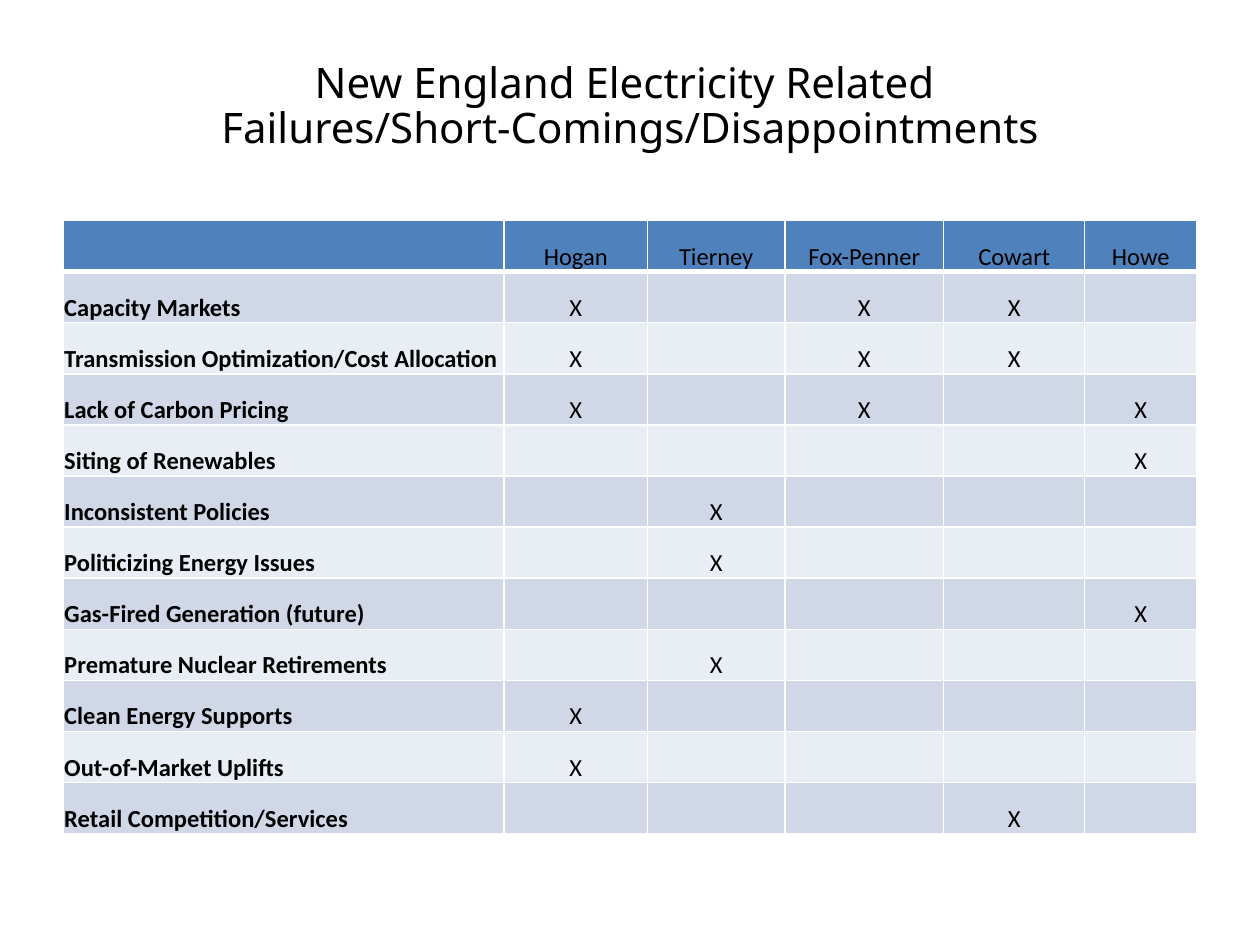
from dataclasses import dataclass

from lxml import etree
from pptx import Presentation
from pptx.dml.color import RGBColor
from pptx.enum.text import MSO_ANCHOR, PP_ALIGN
from pptx.oxml.ns import qn
from pptx.slide import Slide
from pptx.table import _Cell
from pptx.text.text import _Paragraph
from pptx.util import Inches, Pt

CENTER = PP_ALIGN.CENTER
LEFT = PP_ALIGN.LEFT
MIDDLE = MSO_ANCHOR.MIDDLE
BOTTOM = MSO_ANCHOR.BOTTOM

COLORS = {
    "text": "000000",
    "header": "4F81BD",
    "dark_band": "D0D8E8",
    "light_band": "E9EDF4",
    "border": "FFFFFF",
}

TITLE = "New England Electricity Related \vFailures/Short-Comings/Disappointments"
SPEAKERS = ["Hogan", "Tierney", "Fox-Penner", "Cowart", "Howe"]
COLUMN_WIDTHS = [3.5, 1.14, 1.09, 1.26, 1.12, 0.89]


@dataclass
class Issue:
    name: str
    raised_by: tuple[str, ...]


ISSUES = [
    Issue("Capacity Markets", ("Hogan", "Fox-Penner", "Cowart")),
    Issue("Transmission Optimization/Cost Allocation", ("Hogan", "Fox-Penner", "Cowart")),
    Issue("Lack of Carbon Pricing", ("Hogan", "Fox-Penner", "Howe")),
    Issue("Siting of Renewables", ("Howe",)),
    Issue("Inconsistent Policies", ("Tierney",)),
    Issue("Politicizing Energy Issues", ("Tierney",)),
    Issue("Gas-Fired Generation (future)", ("Howe",)),
    Issue("Premature Nuclear Retirements", ("Tierney",)),
    Issue("Clean Energy Supports", ("Hogan",)),
    Issue("Out-of-Market Uplifts", ("Hogan",)),
    Issue("Retail Competition/Services", ("Cowart",)),
]


def format_paragraph(
    paragraph: _Paragraph, font_name: str, size: int, alignment: PP_ALIGN, bold: bool = False
) -> None:
    paragraph.alignment = alignment
    for run in paragraph.runs:
        run.font.name = font_name
        run.font.size = Pt(size)
        run.font.bold = bold
        run.font.color.rgb = RGBColor.from_string(COLORS["text"])


def add_title(slide: Slide) -> None:
    shape = slide.shapes.add_textbox(Inches(0.5), Inches(0.3), Inches(9), Inches(1.1))
    text_frame = shape.text_frame
    text_frame.word_wrap = True
    text_frame.vertical_anchor = MIDDLE
    paragraph = text_frame.paragraphs[0]
    paragraph.text = TITLE
    paragraph.line_spacing = 0.9
    format_paragraph(paragraph, "Noto Sans", 24, CENTER)


def set_borders(cell: _Cell, top: int, bottom: int) -> None:
    properties = cell._tc.get_or_add_tcPr()
    for tag, width in (("a:lnL", 1), ("a:lnR", 1), ("a:lnT", top), ("a:lnB", bottom)):
        line = etree.SubElement(properties, qn(tag), w=str(Pt(width)))
        fill = etree.SubElement(line, qn("a:solidFill"))
        etree.SubElement(fill, qn("a:srgbClr"), val=COLORS["border"])


def fill_cell(cell: _Cell, text: str, row: int, column: int) -> None:
    is_header = row == 0
    is_issue = column == 0
    set_borders(cell, top=3 if row == 1 else 1, bottom=3 if is_header else 1)
    band = "header" if is_header else "dark_band" if row % 2 else "light_band"
    cell.fill.solid()
    cell.fill.fore_color.rgb = RGBColor.from_string(COLORS[band])
    cell.margin_left = cell.margin_right = cell.margin_top = Inches(0.01)
    cell.margin_bottom = 0
    cell.vertical_anchor = BOTTOM
    if text:
        cell.text_frame.text = text
        alignment = LEFT if is_issue else CENTER
        format_paragraph(cell.text_frame.paragraphs[0], "Calibri", 14, alignment, is_issue)


def add_issue_table(slide: Slide) -> None:
    rows = [["", *SPEAKERS]]
    for issue in ISSUES:
        marks = ["X" if speaker in issue.raised_by else "" for speaker in SPEAKERS]
        rows.append([issue.name, *marks])
    table = slide.shapes.add_table(
        len(rows), len(COLUMN_WIDTHS), Inches(0.5), Inches(1.75), Inches(9), Inches(4.87)
    ).table
    for column, width in zip(table.columns, COLUMN_WIDTHS):
        column.width = Inches(width)
    for row, texts in enumerate(rows):
        for column, text in enumerate(texts):
            fill_cell(table.cell(row, column), text, row, column)


def main() -> None:
    presentation = Presentation()
    presentation.slide_width = Inches(10)
    presentation.slide_height = Inches(7.5)
    slide = presentation.slides.add_slide(presentation.slide_layouts[6])
    add_title(slide)
    add_issue_table(slide)
    presentation.save("out.pptx")


if __name__ == "__main__":
    main()
